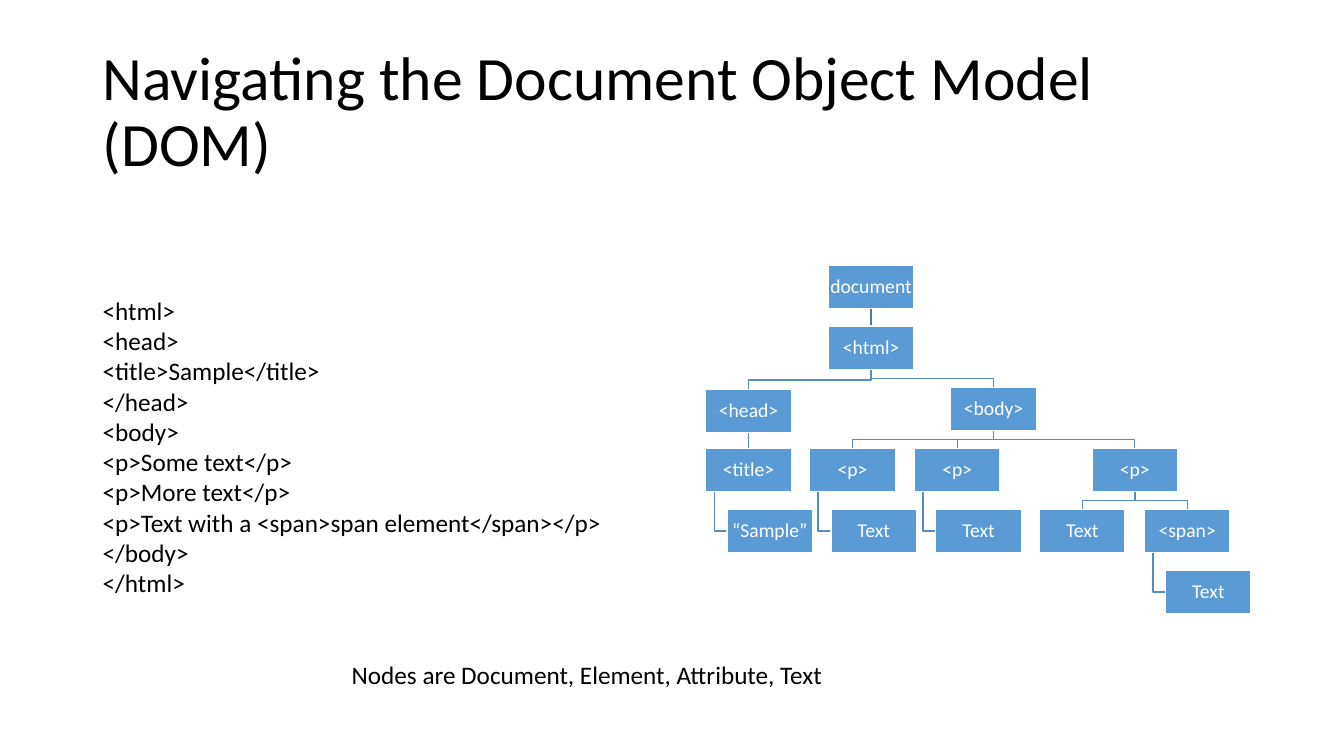
from dataclasses import dataclass

from lxml.etree import SubElement
from pptx import Presentation
from pptx.dml.color import RGBColor as Rgb
from pptx.enum.shapes import MSO_CONNECTOR as Wire, MSO_SHAPE as Form
from pptx.enum.text import MSO_ANCHOR as Anchor, MSO_AUTO_SIZE as Fit, PP_ALIGN as Align
from pptx.oxml.ns import qn
from pptx.util import Inches, Pt


@dataclass(frozen=True)
class Theme:
    """Colours, font and type sizes of the slide."""
    font: str = "Calibri"
    ink: str = "000000"
    pale: str = "FFFFFF"
    box: str = "5B9BD5"
    link: str = "538DC1"
    stem: str = "497CAB"
    title: int = 44
    body: int = 18
    node: int = 14


class Node:
    """A tree node; a parent without x is centred over its children."""

    def __init__(self, tag, *kids, x=None, y=0):
        self.tag, self.kids, self.y = tag, kids, y
        self.x = (kids[0].x + kids[-1].x) / 2 if x is None else x


class Deck:
    """Draws the elements of one slide in one style."""
    wide, high = 0.85, 0.43
    top, step = 2.63, 0.606
    hang, inset = 0.21, 0.085

    def __init__(self, theme):
        self.theme = theme
        self.show = Presentation()
        self.show.slide_width, self.show.slide_height = Inches(13.33), Inches(7.5)
        self.shapes = self.show.slides.add_slide(self.show.slide_layouts[6]).shapes

    def style(self, frame, size, color, space=1.0, align=Align.LEFT):
        for para in frame.paragraphs:
            para.line_spacing, para.alignment = space, align
            for run in para.runs:
                run.font.name, run.font.size = self.theme.font, Pt(size)
                run.font.color.rgb = Rgb.from_string(color)

    def text(self, words, at, size, space=1.0, wrap=False):
        frame = self.shapes.add_textbox(*map(Inches, at)).text_frame
        frame.text = words
        frame.word_wrap = wrap
        frame.auto_size = Fit.NONE if wrap else Fit.SHAPE_TO_FIT_TEXT
        frame.vertical_anchor = Anchor.MIDDLE if wrap else Anchor.TOP
        self.style(frame, size, self.theme.ink, space)

    def box(self, words, x, y):
        area = map(Inches, (x, y, self.wide, self.high))
        shape = self.shapes.add_shape(Form.RECTANGLE, *area)
        shape.shadow.inherit = False
        shape.fill.solid()
        shape.fill.fore_color.rgb = Rgb.from_string(self.theme.box)
        self.stroke(shape, self.theme.pale)
        frame = shape.text_frame
        frame.text = words
        frame.word_wrap = True
        frame.vertical_anchor = Anchor.MIDDLE
        frame.margin_left = frame.margin_right = Inches(0.01)
        frame.margin_top = frame.margin_bottom = Inches(0.01)
        self.style(frame, self.theme.node, self.theme.pale, 0.9, Align.CENTER)

    def stroke(self, shape, color):
        shape.line.color.rgb = Rgb.from_string(color)
        shape.line.width = Pt(1)

    def line(self, start, end, color):
        wire = self.shapes.add_connector(Wire.STRAIGHT, *map(Inches, start + end))
        self.stroke(wire, color)
        SubElement(wire._element.spPr, qn("a:effectLst"))

    def bend(self, points):
        first, *rest = [tuple(map(Inches, point)) for point in points]
        pen = self.shapes.build_freeform(*first)
        pen.add_line_segments(rest, close=False)
        shape = pen.convert_to_shape()
        shape.shadow.inherit = False
        shape.fill.background()
        self.stroke(shape, self.theme.link)

    def join(self, node, kid, low, high, color):
        mid = self.wide / 2
        start, end = node.x + mid, kid.x + mid
        if len(node.kids) > 1:
            turn = high - 0.09
            self.bend([(start, low), (start, turn), (end, turn), (end, high)])
        elif kid.kids:
            self.line((start, low), (end, high), color)
        else:
            side, level = node.x + self.inset, high + self.high / 2
            self.bend([(side, low), (side, level), (kid.x, level)])

    def tree(self, node, row=0):
        y = self.top + row * self.step + node.y
        color = self.theme.link if row else self.theme.stem
        for kid in node.kids:
            below = self.top + (row + 1) * self.step + kid.y
            self.join(node, kid, y + self.high, below, color)
            self.tree(kid, row + 1)
        self.box(node.tag, node.x, y)


def stem(tag, word, x):
    """Return a node with one text hanging below it."""
    return Node(tag, Node(word, x=x + Deck.hang), x=x)


CODE = """<html>
<head>
<title>Sample</title>
</head>
<body>
<p>Some text</p>
<p>More text</p>
<p>Text with a <span>span element</span></p>
</body>
</html>"""


def main():
    """Build and save the slide."""
    theme = Theme()
    deck = Deck(theme)
    deck.text("Navigating the Document Object Model (DOM)",
              (0.92, 0.4, 11.5, 1.45), theme.title, 0.9, True)
    deck.text(CODE, (0.92, 2.88, 5.2, 3.13), theme.body)
    head = Node("<head>", stem("<title>", "“Sample”", 7), y=0.02)
    last = Node("<p>", Node("Text", x=10.31), stem("<span>", "Text", 11.35))
    body = Node("<body>", stem("<p>", "Text", 8.03), stem("<p>", "Text", 9.07), last)
    deck.tree(Node("document", Node("<html>", head, body)))
    deck.text("Nodes are Document, Element, Attribute, Text",
              (3.39, 6.49, 4.93, 0.4), theme.body)
    deck.show.save("out.pptx")


if __name__ == "__main__":
    main()
